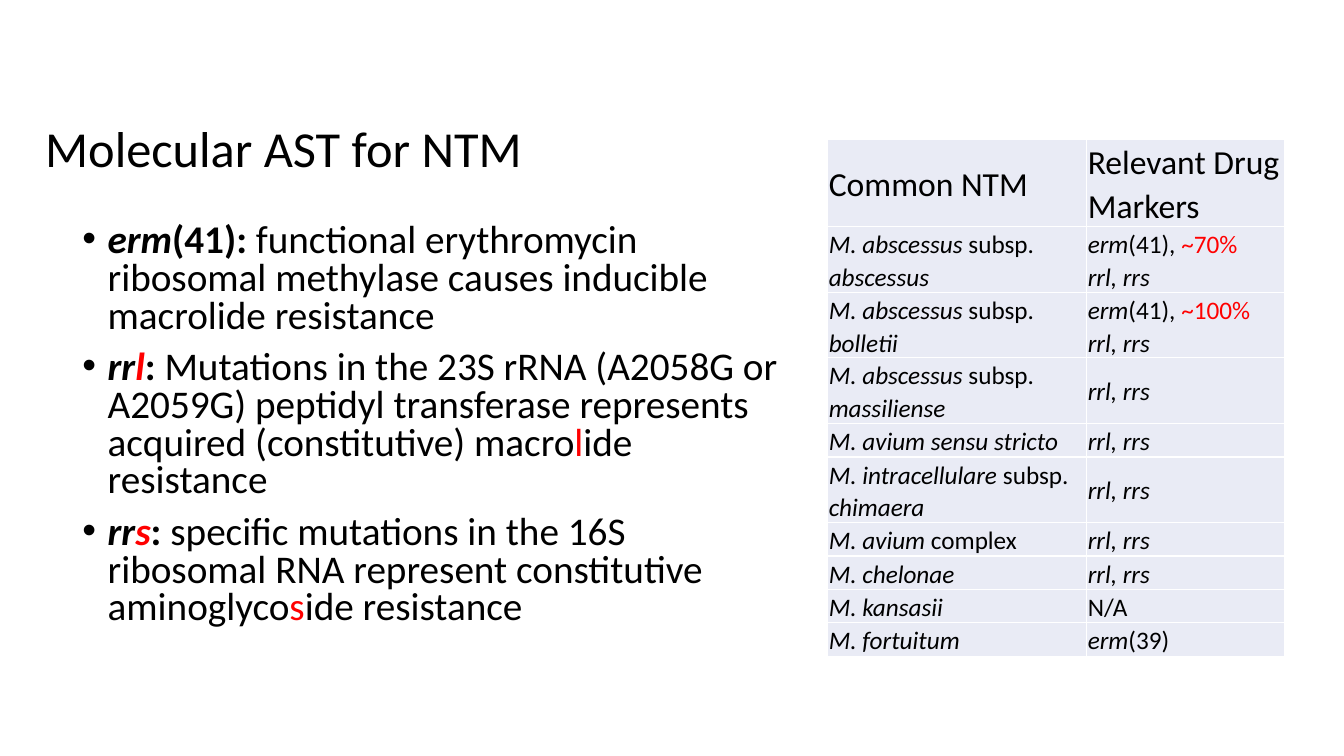
from lxml import etree
from pptx import Presentation
from pptx.dml.color import RGBColor
from pptx.enum.text import MSO_ANCHOR as Anchor
from pptx.oxml.ns import qn
from pptx.util import Inches, Pt

BLACK = RGBColor(0x00, 0x00, 0x00)
RED = RGBColor(0xFF, 0x00, 0x00)
CELL_FILL = RGBColor(0xE9, 0xEB, 0xF5)
BORDER = RGBColor(0xFF, 0xFF, 0xFF)

GENES = [("rrl, rrs", "i")]
MARKERS = [
    [("erm", "bi"), ("(41):", "b"),
     (" functional erythromycin ribosomal methylase causes inducible macrolide resistance", "")],
    [("rr", "bi"), ("l", "bir"), (": ", "b"),
     ("Mutations in the 23S rRNA (A2058G or A2059G) peptidyl transferase "
      "represents acquired (constitutive) macro", ""),
     ("l", "r"), ("ide resistance", "")],
    [("rr", "bi"), ("s", "bir"), (": ", "b"),
     ("specific mutations in the 16S ribosomal RNA represent constitutive aminoglyco", ""),
     ("s", "r"), ("ide resistance", "")],
]


def subspecies(species, name):
    """Return the runs of a subspecies name."""
    return [[(f"M. {species} ", "i"), ("subsp. ", ""), (name, "i")]]


def erm41(share):
    """Return the marker paragraphs for a share of functional erm(41)."""
    return [[("erm", "i"), ("(41), ", ""), (share, "r")], GENES]


SPECIES_ROWS = [
    (0.78, [[("Common NTM", "")]], [[("Relevant Drug Markers", "")]]),
    (0.56, subspecies("abscessus", "abscessus"), erm41("~70%")),
    (0.31, subspecies("abscessus", "bolletii"), erm41("~100%")),
    (0.56, subspecies("abscessus", "massiliense"), [GENES]),
    (0.28, [[("M. avium sensu stricto", "i")]], [GENES]),
    (0.56, subspecies("intracellulare", "chimaera"), [GENES]),
    (0.28, [[("M. avium ", "i"), ("complex", "")]], [GENES]),
    (0.28, [[("M. chelonae", "i")]], [GENES]),
    (0.28, [[("M. kansasii", "i")]], [[("N/A", "")]]),
    (0.26, [[("M. fortuitum", "i")]], [[("erm", "i"), ("(39)", "")]]),
]


class SlideBuilder:
    """Hold the text style and the current slide."""

    def __init__(self, slide, font="Calibri"):
        """Keep the slide and the font name."""
        self.slide = slide
        self.font = font

    def fill_text(self, frame, paragraphs, size, spacing, bullet=False):
        """Fill a text frame; run flags are b bold, i italic, r red."""
        frame.word_wrap = True
        for index, runs in enumerate(paragraphs):
            paragraph = frame.add_paragraph() if index else frame.paragraphs[0]
            paragraph.line_spacing = spacing
            if bullet:
                self.bullet(paragraph)
                paragraph.space_before = Pt(10 if index else 0)
            for text, flags in runs:
                run = paragraph.add_run()
                run.text = text
                run.font.name = self.font
                run.font.size = Pt(size)
                run.font.bold = "b" in flags
                run.font.italic = "i" in flags
                run.font.color.rgb = RED if "r" in flags else BLACK

    def bullet(self, paragraph):
        """Give a paragraph a hanging round bullet."""
        properties = paragraph._p.get_or_add_pPr()
        properties.set("marL", str(Inches(0.25)))
        properties.set("indent", str(-Inches(0.25)))
        etree.SubElement(properties, qn("a:buFont")).set("typeface", "Arial")
        etree.SubElement(properties, qn("a:buChar")).set("char", "•")

    def text(self, left, top, width, height, paragraphs, size, spacing, bullet=False):
        """Add a text box."""
        box = self.slide.shapes.add_textbox(
            Inches(left), Inches(top), Inches(width), Inches(height))
        self.fill_text(box.text_frame, paragraphs, size, spacing, bullet)

    def border(self, cell):
        """Draw thin lines on all four sides of a cell."""
        properties = cell._tc.get_or_add_tcPr()
        for side in ("lnL", "lnR", "lnT", "lnB"):
            line = etree.SubElement(properties, qn(f"a:{side}"), w=str(Pt(1)))
            fill = etree.SubElement(line, qn("a:solidFill"))
            etree.SubElement(fill, qn("a:srgbClr")).set("val", str(BORDER))

    def table(self, left, top, widths, rows):
        """Add a table from rows of height and cell paragraphs."""
        height = sum(row[0] for row in rows)
        table = self.slide.shapes.add_table(
            len(rows), len(widths), Inches(left), Inches(top),
            Inches(sum(widths)), Inches(height)).table
        table.first_row = False
        table.horz_banding = False
        for column, width in zip(table.columns, widths):
            column.width = Inches(width)
        for index, (row_height, *contents) in enumerate(rows):
            table.rows[index].height = Inches(row_height)
            for cell, paragraphs in zip(table.rows[index].cells, contents):
                self.border(cell)
                cell.fill.solid()
                cell.fill.fore_color.rgb = CELL_FILL
                cell.vertical_anchor = Anchor.MIDDLE
                cell.margin_left = cell.margin_right = cell.margin_top = Inches(0.01)
                cell.margin_bottom = 0
                self.fill_text(cell.text_frame, paragraphs, 18 if index else 24, 1.07)


def main():
    """Build and save the slide."""
    deck = Presentation()
    deck.slide_width = Inches(13.33)
    deck.slide_height = Inches(7.5)
    builder = SlideBuilder(deck.slides.add_slide(deck.slide_layouts[6]))
    builder.text(0.35, 1.18, 9.43, 0.98, [[("Molecular AST for NTM", "")]], 36, 0.9)
    builder.text(0.72, 2.17, 7.24, 4.35, MARKERS, 28, 0.8, bullet=True)
    builder.table(8.21, 1.38, [2.57, 1.96], SPECIES_ROWS)
    deck.save("out.pptx")


if __name__ == "__main__":
    main()
